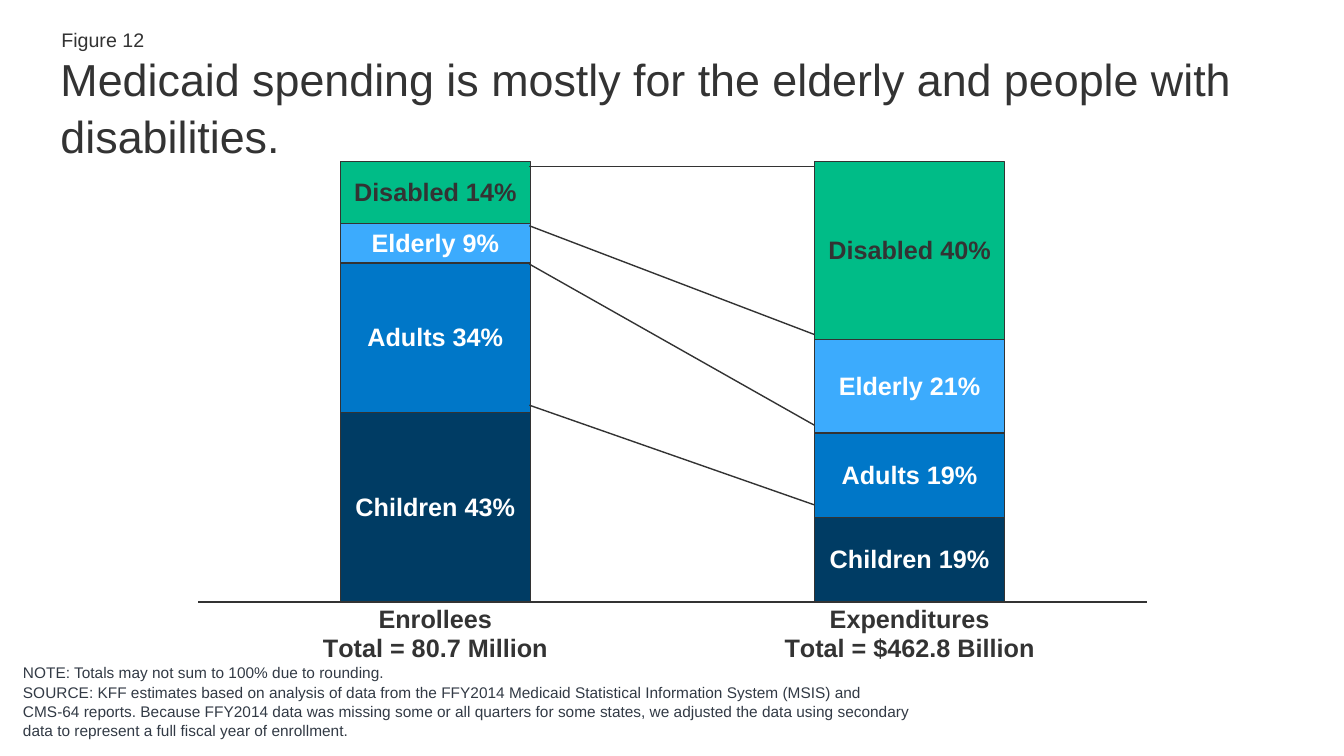
from lxml import etree
from pptx import Presentation
from pptx.chart.data import CategoryChartData
from pptx.dml.color import RGBColor
from pptx.enum.chart import XL_CHART_TYPE, XL_TICK_LABEL_POSITION, XL_TICK_MARK
from pptx.enum.shapes import MSO_CONNECTOR
from pptx.enum.text import MSO_ANCHOR, PP_ALIGN
from pptx.oxml import parse_xml
from pptx.oxml.ns import nsdecls, qn
from pptx.util import Inches, Pt

STACKED = XL_CHART_TYPE.COLUMN_STACKED_100
NO_TICK = XL_TICK_MARK.NONE
NO_LABEL = XL_TICK_LABEL_POSITION.NONE
STRAIGHT = MSO_CONNECTOR.STRAIGHT
TOP, MIDDLE, BOTTOM = MSO_ANCHOR.TOP, MSO_ANCHOR.MIDDLE, MSO_ANCHOR.BOTTOM
LEFT = PP_ALIGN.LEFT

# Content
FIGURE = "Figure 12"
TITLE = "Medicaid spending is mostly for the elderly and people with disabilities."
NOTES = [
    "NOTE: Totals may not sum to 100% due to rounding.",
    "SOURCE: KFF estimates based on analysis of data from the FFY2014 Medicaid "
    "Statistical Information System (MSIS) and CMS-64 reports. Because FFY2014 "
    "data was missing some or all quarters for some states, we adjusted the data "
    "using secondary data to represent a full fiscal year of enrollment.",
]
BARS = ["Enrollees\nTotal = 80.7 Million", "Expenditures\nTotal = $462.8 Billion"]
GROUPS = [  # name, shares, fill, label colour
    ("Children", (0.43, 0.19), "navy", "white"),
    ("Adults", (0.34, 0.19), "blue", "white"),
    ("Elderly", (0.09, 0.21), "sky", "white"),
    ("Disabled", (0.14, 0.40), "green", "ink"),
]
LINKS = [(1.65, 1.65), (2.24, 3.32), (2.62, 4.22), (4.02, 5.01)]  # left y, right y


class Theme:
    font = "Arial"
    ink, note, white = "333333", "323A45", "FFFFFF"
    navy, blue, sky, green = "003C64", "0077C8", "3CABFD", "00BC87"
    title, label, tag, small = 32, 18, 14, 11
    line = 1


# Grid, in inches
WIDE, HIGH = 13.33, 7.5
TAG_BOX = (0.51, 0.22, 5.15, 0.35)
TITLE_BOX = (0.5, 0.44, 12.31, 1)
NOTE_BOX = (0.13, 6.59, 9.1, 0.8)
CHART_BOX = (1.77, 1.5, 9.8, 5.2)
PLOT = {"x": 0.02, "y": 0.02, "w": 0.96, "h": 0.84}  # shares of the chart
LINK_X = (5.25, 8.08)


def color(name):
    return RGBColor.from_string(getattr(Theme, name))


def set_font(font, size, tint, bold=False):
    font.name, font.size, font.bold = Theme.font, Pt(size), bold
    font.color.rgb = color(tint)


def set_line(line):
    line.width = Pt(Theme.line)
    line.color.rgb = color("ink")


def write(shape, lines, size, tint="ink", anchor=TOP, space=1.0):
    frame = shape.text_frame
    frame.word_wrap = True
    frame.vertical_anchor = anchor
    frame.text = "\n".join(lines)
    for para in frame.paragraphs:
        para.alignment, para.line_spacing = LEFT, space
        para.space_before = para.space_after = Pt(0)
        set_font(para.font, size, tint)


def add_text(slide, box, lines, size, **look):
    write(slide.shapes.add_textbox(*map(Inches, box)), lines, size, **look)


def add_bars(slide):
    data = CategoryChartData(number_format="0%")
    data.categories = BARS
    for name, shares, _, _ in GROUPS:
        data.add_series(name, shares)
    chart = slide.shapes.add_chart(STACKED, *map(Inches, CHART_BOX), data).chart
    chart.has_legend = chart.has_title = False
    set_font(chart.font, Theme.label, "ink")

    # Axes
    base, scale = chart.category_axis, chart.value_axis
    base.major_tick_mark = NO_TICK
    set_font(base.tick_labels.font, Theme.label, "ink", bold=True)
    set_line(base.format.line)
    scale.has_major_gridlines = scale.visible = False
    scale.tick_label_position = NO_LABEL
    scale.minimum_scale, scale.maximum_scale = 0, 1

    # Bars and their labels
    plot = chart.plots[0]
    plot.gap_width, plot.overlap = 150, 100
    plot.vary_by_categories = False
    for series, (_, _, fill, tint) in zip(plot.series, GROUPS):
        series.format.fill.solid()
        series.format.fill.fore_color.rgb = color(fill)
        set_line(series.format.line)
        labels = series.data_labels
        labels.show_series_name = labels.show_value = True
        labels.number_format, labels.number_format_is_linked = "0%", False
        set_font(labels.font, Theme.label, tint, bold=True)
        gap = etree.Element(qn("c:separator"))
        gap.text = " "
        labels._element.find(qn("c:showBubbleSize")).addnext(gap)

    # Fixed plot area
    area = chart._chartSpace.find(".//" + qn("c:plotArea"))
    for old in area.findall(qn("c:layout")):
        area.remove(old)
    spots = "".join(f'<c:{key} val="{val}"/>' for key, val in PLOT.items())
    area.insert(0, parse_xml(
        f'<c:layout {nsdecls("c")}><c:manualLayout><c:layoutTarget val="inner"/>'
        f'<c:xMode val="edge"/><c:yMode val="edge"/>{spots}'
        f'</c:manualLayout></c:layout>'))


def add_link(slide, start, end):
    ends = (LINK_X[0], start, LINK_X[1], end)
    link = slide.shapes.add_connector(STRAIGHT, *map(Inches, ends))
    set_line(link.line)
    etree.SubElement(link._element.spPr, qn("a:effectLst"))


def main():
    deck = Presentation()
    deck.slide_width, deck.slide_height = Inches(WIDE), Inches(HIGH)
    slide = deck.slides.add_slide(deck.slide_layouts[5])

    # Heading
    add_text(slide, TAG_BOX, [FIGURE], Theme.tag, anchor=MIDDLE)
    title = slide.shapes.title
    title.left, title.top, title.width, title.height = map(Inches, TITLE_BOX)
    write(title, [TITLE], Theme.title, space=1.05)

    # Chart, links and notes
    add_bars(slide)
    add_text(slide, NOTE_BOX, NOTES, Theme.small, tint="note", anchor=BOTTOM, space=1.05)
    for start, end in LINKS:
        add_link(slide, start, end)
    deck.save("out.pptx")


if __name__ == "__main__":
    main()
